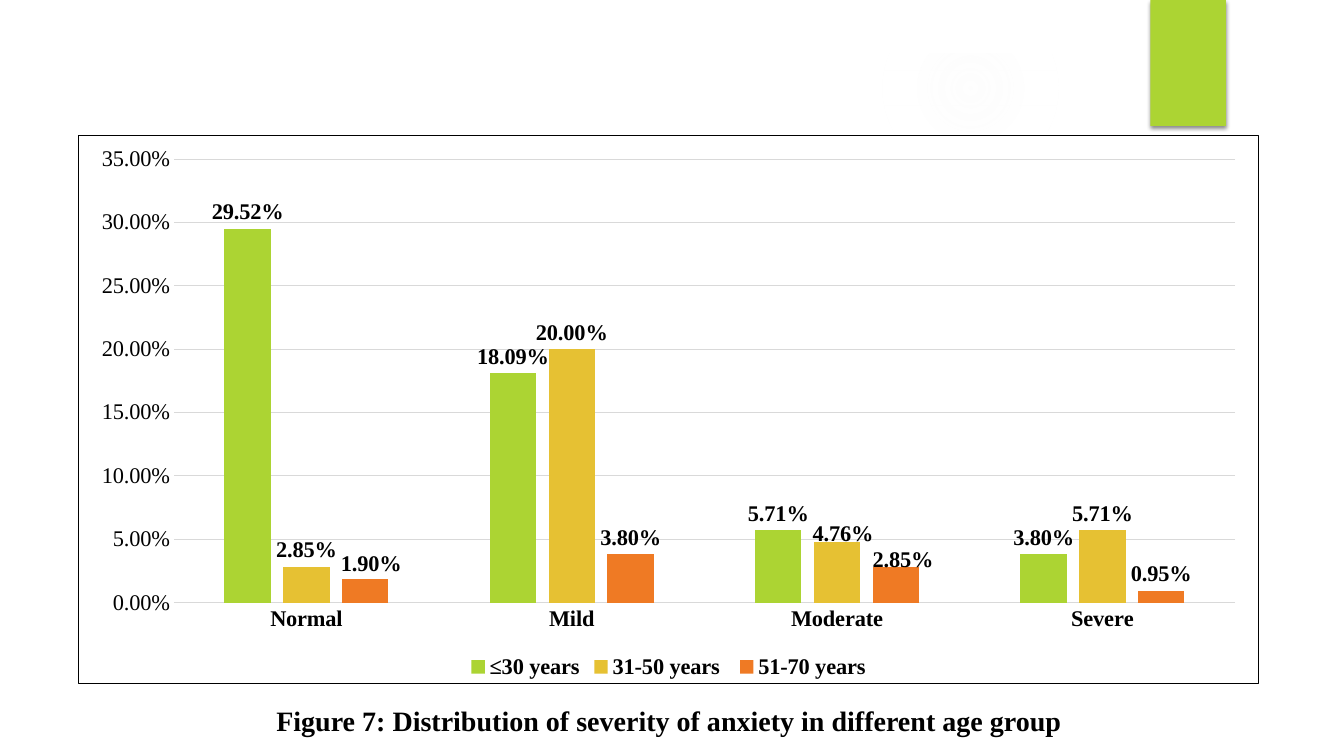
from dataclasses import dataclass

from lxml import etree
from pptx import Presentation
from pptx import util as u
from pptx.chart.data import CategoryChartData
from pptx.dml.color import RGBColor
from pptx.enum import chart as ch, shapes, text
from pptx.oxml import parse_xml
from pptx.oxml.ns import nsdecls, qn


@dataclass(frozen=True)
class Theme:
    ink: str = "000000"
    paper: str = "FFFFFF"
    glow: str = "F7F7F7"
    grid: str = "D9D9D9"
    accent: str = "ACD433"
    age_colors: tuple = ("ACD433", "E6C133", "EF7A24")
    font: str = "Times New Roman"
    chart_font: str = "League Spartan"
    base_size: int = 10
    chart_size: int = 16
    caption_size: int = 20
    line: float = 0.75


THEME = Theme()
PERCENT = "0.00%"
SEVERITIES = ("Normal", "Mild", "Moderate", "Severe")
AGE_GROUPS = {
    "≤30 years": (0.2952, 0.1809, 0.0571, 0.038),
    "31-50 years ": (0.0285, 0.2, 0.0476, 0.0571),
    "51-70 years": (0.019, 0.038, 0.0285, 0.0095),
}
# (age group, severity): label shift as a share of the chart's width and height
LABEL_SHIFTS = {(1, 2): (0.005, 0.015), (2, 0): (0.005, 0.003), (2, 2): (0.006, 0.018)}
# left, top, diameter, then opacity at the centre and at 36 %, and the fade-out stop
GLOWS = ((0, 2.92, 4.58, 11, 10, 75), (0, 3.17, 2.58, 8, 8, 72), (9.41, 1.83, 3.08, 7, 6, 69),
         (8.75, 0, 1.75, 14, 7, 73), (9.41, 6.42, 1.08, 14, 7, 66))
PANEL = ((0.5, 2.04), (0.5, 7), (12.84, 7), (12.84, 2.04), (11.72, 2.2), (10.6, 2.32),
         (9.49, 2.41), (8.4, 2.46), (7.08, 2.48), (5.83, 2.46), (4.44, 2.41), (2.83, 2.3))


def style_font(font, size=THEME.chart_size, bold=False, name=THEME.font):
    font.name, font.size, font.bold = name, u.Pt(size), bold
    font.color.rgb = RGBColor.from_string(THEME.ink)


def paint(shape, color):
    shape.fill.solid()
    shape.fill.fore_color.rgb = RGBColor.from_string(color)
    shape.line.fill.background()
    shape.shadow.inherit = False


def add_glow(slide, left, top, size, centre, middle, fade):
    glow = slide.shapes.add_shape(shapes.MSO_SHAPE.OVAL, left, top, size, size)
    paint(glow, THEME.glow)
    stops = "".join(
        f'<a:gs pos="{pos * 1000}"><a:srgbClr val="{THEME.glow}">'
        f'<a:alpha val="{alpha * 1000}"/></a:srgbClr></a:gs>'
        for pos, alpha in ((0, centre), (36, middle), (fade, 0)))
    solid = glow._element.spPr.find(qn("a:solidFill"))
    solid.getparent().replace(solid, parse_xml(
        f'<a:gradFill {nsdecls("a")}><a:gsLst>{stops}</a:gsLst><a:path path="circle">'
        '<a:fillToRect l="50000" t="50000" r="50000" b="50000"/></a:path></a:gradFill>'))


def add_backdrop(slide, width, height):
    for left, top, size, *fading in GLOWS:
        add_glow(slide, u.Inches(left), u.Inches(top), u.Inches(size), *fading)
    start, *rest = PANEL
    outline = slide.shapes.build_freeform(*start, scale=u.Inches(1))
    outline.add_line_segments(rest)
    paint(outline.convert_to_shape(), THEME.paper)
    border = slide.shapes.add_shape(shapes.MSO_SHAPE.FRAME, 0, 0, width, height)
    border.adjustments[0] = 0.07
    paint(border, THEME.paper)


def add_ribbon(slide, left, top, width, height):
    ribbon = slide.shapes.add_shape(shapes.MSO_SHAPE.RECTANGLE, left, top, width, height)
    paint(ribbon, THEME.accent)
    ribbon._element.spPr.find(qn("a:effectLst")).append(parse_xml(
        f'<a:outerShdw {nsdecls("a")} blurRad="{u.Pt(3)}" dist="{u.Pt(2)}" dir="5400000">'
        f'<a:srgbClr val="{THEME.ink}"><a:alpha val="45000"/></a:srgbClr></a:outerShdw>'))


def manual_layout(**parts):
    """Return a chart layout element with the given parts in order."""
    layout = etree.Element(qn("c:layout"))
    manual = etree.SubElement(layout, qn("c:manualLayout"))
    for tag, value in parts.items():
        etree.SubElement(manual, qn(f"c:{tag}")).set("val", str(value))
    return layout


def frame_chart(chart):
    """Set the base font, the white ground, the border and the plot's place."""
    style_font(chart.font, THEME.base_size, name=THEME.chart_font)
    space = chart._chartSpace
    space.find(qn("c:txPr")).addprevious(parse_xml(
        f'<c:spPr {nsdecls("c", "a")}>'
        f'<a:solidFill><a:srgbClr val="{THEME.paper}"/></a:solidFill>'
        f'<a:ln w="{u.Pt(THEME.line)}"><a:solidFill><a:srgbClr val="{THEME.ink}"/>'
        '</a:solidFill></a:ln></c:spPr>'))
    plot_area = space.chart.plotArea
    for layout in plot_area.findall(qn("c:layout")):
        plot_area.remove(layout)
    plot_area.insert(0, manual_layout(
        layoutTarget="inner", xMode="edge", yMode="edge", x=0.081, y=0.043, w=0.899, h=0.809))


def style_axes(chart):
    severity, share = chart.category_axis, chart.value_axis
    for axis in (severity, share):
        axis.major_tick_mark = axis.minor_tick_mark = ch.XL_TICK_MARK.NONE
    style_font(severity.tick_labels.font, bold=True)
    style_font(share.tick_labels.font)
    share.minimum_scale, share.maximum_scale, share.major_unit = 0, 0.35, 0.05
    share.tick_labels.number_format = PERCENT
    share.tick_labels.number_format_is_linked = False
    share.format.line.fill.background()
    for line in (severity.format.line, share.major_gridlines.format.line):
        line.color.rgb = RGBColor.from_string(THEME.grid)
        line.width = u.Pt(THEME.line)


def style_age_group(series, color):
    series.format.fill.solid()
    series.format.fill.fore_color.rgb = RGBColor.from_string(color)
    labels = series.data_labels
    labels.show_value = True
    labels.position = ch.XL_LABEL_POSITION.OUTSIDE_END
    labels.number_format, labels.number_format_is_linked = PERCENT, False
    style_font(labels.font, bold=True)


def shift_label(series, severity, shift):
    label = series.points[severity].data_label
    label.position = ch.XL_LABEL_POSITION.OUTSIDE_END
    style_font(label.font, bold=True)
    index = series._element.xpath(f'c:dLbls/c:dLbl/c:idx[@val="{severity}"]')[0]
    index.addnext(manual_layout(x=shift[0], y=shift[1]))


def add_anxiety_chart(slide, left, top, width, height):
    data = CategoryChartData(number_format=PERCENT)
    data.categories = SEVERITIES
    for age_group, shares in AGE_GROUPS.items():
        data.add_series(age_group, shares)
    chart = slide.shapes.add_chart(
        ch.XL_CHART_TYPE.COLUMN_CLUSTERED, left, top, width, height, data).chart
    chart.has_title = False
    frame_chart(chart)
    style_axes(chart)
    chart.has_legend = True
    chart.legend.position = ch.XL_LEGEND_POSITION.BOTTOM
    chart.legend.include_in_layout = False
    style_font(chart.legend.font, bold=True)
    columns = chart.plots[0]
    columns.gap_width, columns.overlap = 219, -27
    columns.vary_by_categories = False
    for series, color in zip(columns.series, THEME.age_colors):
        style_age_group(series, color)
    for (age_group, severity), shift in LABEL_SHIFTS.items():
        shift_label(columns.series[age_group], severity, shift)


def place_caption(slide, left, top, width, height):
    caption = slide.shapes.title
    caption.left, caption.top, caption.width, caption.height = left, top, width, height
    frame = caption.text_frame
    frame.word_wrap, frame.auto_size = True, text.MSO_AUTO_SIZE.NONE
    frame.vertical_anchor = text.MSO_ANCHOR.TOP
    frame.paragraphs[0].alignment = text.PP_ALIGN.LEFT
    run = frame.paragraphs[0].add_run()
    run.text = "Figure 7: Distribution of severity of anxiety in different age group"
    style_font(run.font, THEME.caption_size, bold=True)
    slide.shapes._spTree.append(caption._element)


def main():
    deck = Presentation()
    deck.slide_width, deck.slide_height = u.Inches(13.33), u.Inches(7.5)
    slide = deck.slides.add_slide(deck.slide_layouts[5])
    add_backdrop(slide, deck.slide_width, deck.slide_height)
    add_ribbon(slide, u.Inches(11.41), 0, u.Inches(0.75), u.Inches(1.25))
    add_anxiety_chart(slide, u.Inches(0.77), u.Inches(1.34), u.Inches(11.72), u.Inches(5.45))
    place_caption(slide, u.Inches(2.64), u.Inches(6.93), u.Inches(8.65), u.Inches(0.44))
    deck.save("out.pptx")


if __name__ == "__main__":
    main()
